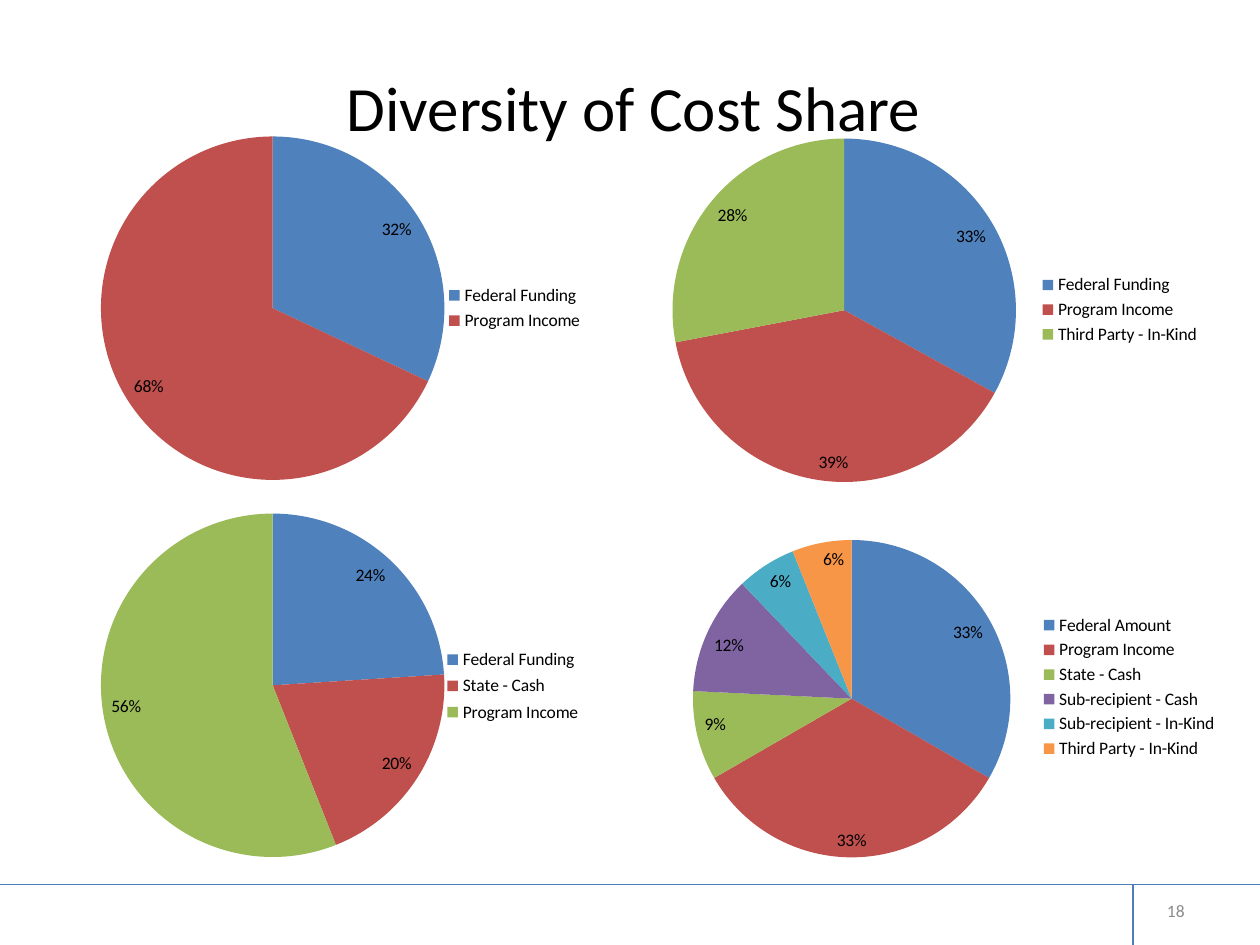
from pptx import Presentation
from pptx.chart.data import CategoryChartData as Data
from pptx.dml.color import RGBColor
from pptx.enum.chart import XL_CHART_TYPE as Kind, XL_LABEL_POSITION as Spot, XL_LEGEND_POSITION as Side
from pptx.enum.shapes import MSO_CONNECTOR as Link
from pptx.enum.text import MSO_ANCHOR as Anchor, PP_ALIGN as Align
from pptx.oxml import parse_xml
from pptx.oxml.ns import nsdecls, qn
from pptx.util import Pt


def paint(font, size, color):
    font.name = "Calibri"
    font.size = Pt(size)
    font.color.rgb = RGBColor.from_string(color)


def arrange(node, index, frame, box, inner=""):
    for old in node.findall(qn("c:layout")):
        node.remove(old)
    left, top, wide, high = frame
    x, y, w, h = box
    parts = {"x": (x - left) / wide, "y": (y - top) / high, "w": w / wide, "h": h / high}
    modes = '<c:xMode val="edge"/><c:yMode val="edge"/>'
    sizes = "".join(f'<c:{key} val="{part:.4f}"/>' for key, part in parts.items())
    node.insert(index, parse_xml(
        f'<c:layout {nsdecls("c")}><c:manualLayout>{inner}{modes}{sizes}</c:manualLayout></c:layout>'))


deck = Presentation()
deck.slide_width, deck.slide_height = Pt(720), Pt(540)
slide = deck.slides.add_slide(deck.slide_layouts[6])
shapes = slide.shapes

for ends in [(0, 505.5, 720, 505.5), (647.5, 505.5, 647.5, 540)]:
    rule = shapes.add_connector(Link.STRAIGHT, *map(Pt, ends))
    rule.line.color.rgb = RGBColor.from_string("4B7EBC")
    rule.line.width = Pt(0.75)
    rule._element.spPr.append(parse_xml(f'<a:effectLst {nsdecls("a")}/>'))

texts = [
    ("18", (516, 512, 168, 17), Align.RIGHT, 10, "8C8C8C"),
    ("Diversity of Cost Share", (51, 31.5, 622, 58), Align.CENTER, 36, "000000"),
]
for words, box, align, size, color in texts:
    frame = shapes.add_textbox(*map(Pt, box)).text_frame
    frame.word_wrap = True
    frame.vertical_anchor = Anchor.MIDDLE
    frame.text = words
    line = frame.paragraphs[0]
    line.alignment = align
    paint(line.runs[0].font, size, color)

colors = ["4F81BD", "C0504D", "9BBB59", "8064A2", "4BACC6", "F79646"]
fund, income, cash, third = "Federal Funding", "Program Income", "State - Cash", "Third Party - In-Kind"
pies = [
    ((30, 68.5, 339, 216), (57.7, 78, 196.3, 196.3), (254, 160, 80, 32),
     {fund: 0.32, income: 0.68}),
    ((373, 69, 320, 216), (384.3, 79.2, 196.3, 196.3), None,
     {fund: 0.33, income: 0.39, third: 0.28}),
    ((30, 284, 339, 216.5), (57.7, 293.5, 196.3, 196.3), (253, 367.5, 80, 49),
     {fund: 0.24, cash: 0.2, income: 0.56}),
    ((380, 284.5, 323, 216), (396, 308.6, 181.4, 181.4), None,
     {"Federal Amount": 0.33, income: 0.33, cash: 0.09, "Sub-recipient - Cash": 0.12,
      "Sub-recipient - In-Kind": 0.06, third: 0.06}),
]
for frame, disc, key, shares in pies:
    data = Data(number_format="0%")
    data.categories = list(shares)
    data.add_series("Series 1", list(shares.values()))
    chart = shapes.add_chart(Kind.PIE, *map(Pt, frame), data).chart
    paint(chart.font, 10, "000000")
    chart.has_title = False
    chart.has_legend = True
    legend = chart.legend
    legend.position = Side.RIGHT
    legend.include_in_layout = False
    paint(legend.font, 10, "000000")
    plot = chart.plots[0]
    plot.vary_by_categories = True
    plot.has_data_labels = True
    labels = plot.data_labels
    labels.show_value = True
    labels.show_percentage = False
    labels.number_format = "0%"
    labels.number_format_is_linked = False
    labels.position = Spot.INSIDE_END
    paint(labels.font, 10, "000000")
    for spot, color in enumerate(colors[:len(shares)]):
        fill = plot.series[0].points[spot].format.fill
        fill.solid()
        fill.fore_color.rgb = RGBColor.from_string(color)
    area = chart._chartSpace.xpath(".//c:plotArea")[0]
    arrange(area, 0, frame, disc, '<c:layoutTarget val="inner"/>')
    if key:
        arrange(legend._element, 1, frame, key)

deck.save("out.pptx")
